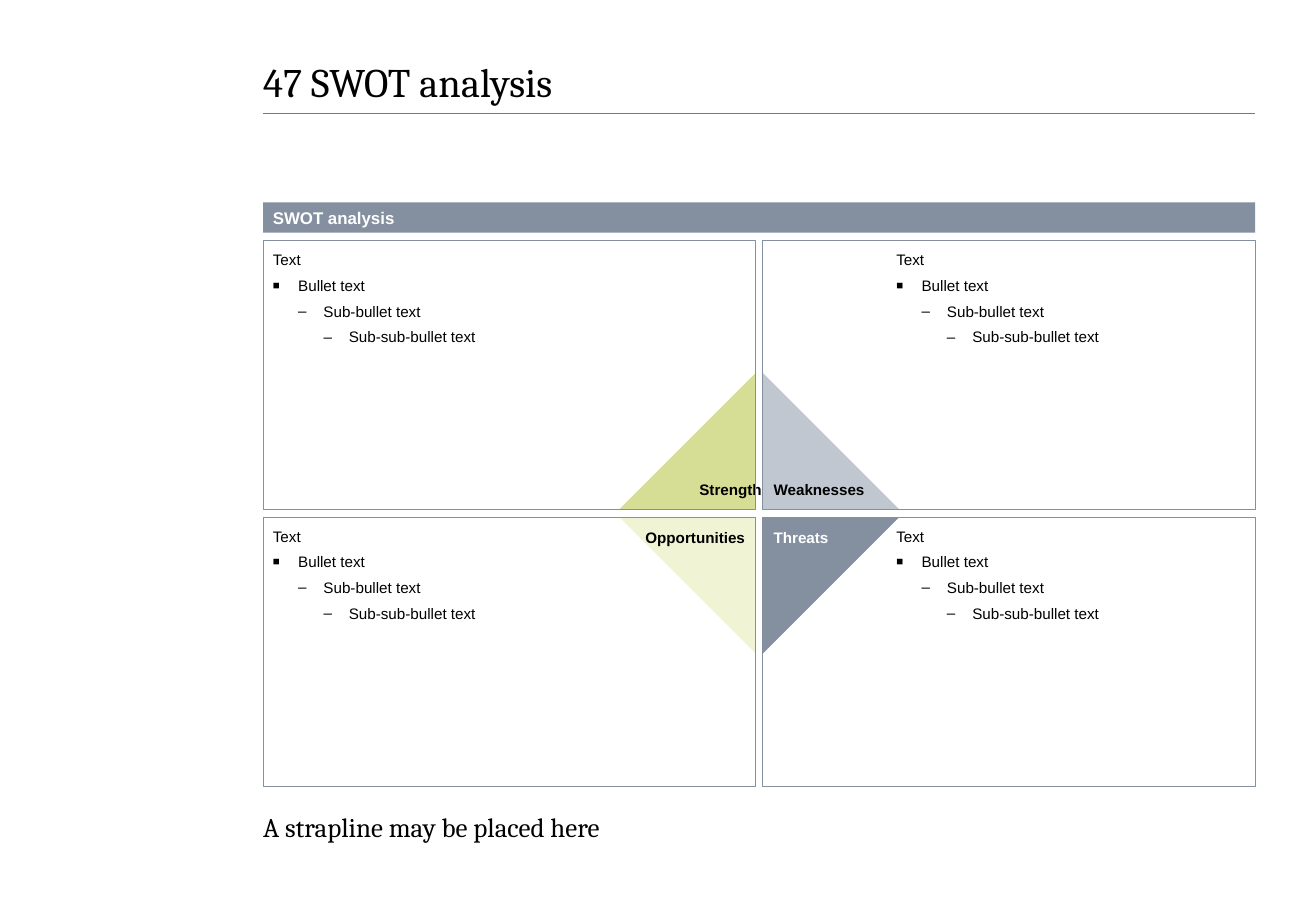
from lxml import etree
from pptx import Presentation
from pptx.dml.color import RGBColor
from pptx.enum import shapes, text
from pptx.oxml import ns
from pptx.util import Pt

BLACK = RGBColor(0x00, 0x00, 0x00)
WHITE = RGBColor(0xFF, 0xFF, 0xFF)
RULE_GREY = RGBColor(0x78, 0x78, 0x78)
SLATE = RGBColor(0x84, 0x8F, 0xA0)
LIGHT_SLATE = RGBColor(0xC1, 0xC7, 0xD0)
GREEN = RGBColor(0xD5, 0xDE, 0x94)
PALE_GREEN = RGBColor(0xF0, 0xF4, 0xD4)

LEFT, WIDTH = 156, 588
GAP_X, GAP_Y = 4, 4.5
INSET = 5.75
TRIANGLE = 81
BULLET_STEP = 15
LABEL_WIDTH, LABEL_HEIGHT = 90, 11
LABEL_RISE = 14.25  # from the centre of the grid to the middle of a label

# column, row, label, fill, label colour, rotation, label distance from centre
QUADRANTS = [
    (1, 1, "Threats", SLATE, WHITE, 90, 8.5),
    (0, 1, "Opportunities", PALE_GREEN, BLACK, 180, 8.5),
    (0, 0, "Strengths", GREEN, BLACK, 270, -6.5),
    (1, 0, "Weaknesses", LIGHT_SLATE, BLACK, 0, 8.5),
]
# text, bullet, bullet size in percent
OUTLINE = [
    ("Text", None, None),
    ("Bullet text", "■", 75),
    ("Sub-bullet text", "–", 100),
    ("Sub-sub-bullet text", "–", 100),
]


def set_frame(shape, insets=(0, 0, 0, 0), anchor=text.MSO_ANCHOR.TOP):
    frame = shape.text_frame
    formats = {"word_wrap": True, "vertical_anchor": anchor}
    sides = ("margin_left", "margin_top", "margin_right", "margin_bottom")
    formats.update(zip(sides, map(Pt, insets)))
    for name, value in formats.items():
        setattr(frame, name, value)
    return frame


def add_span(para, words, size, color=BLACK, font="Arial", bold=False):
    span = para.add_run()
    span.text = words
    for name, value in {"name": font, "size": Pt(size), "bold": bold}.items():
        setattr(span.font, name, value)
    span.font.color.rgb = color


def add_shape(page, kind, box, fill=None, line=None):
    shape = page.shapes.add_shape(kind, *map(Pt, box))
    shape.shadow.inherit = False
    if fill is None:
        shape.fill.background()
    else:
        shape.fill.solid()
        shape.fill.fore_color.rgb = fill
    if line is None:
        shape.line.fill.background()
    else:
        shape.line.color.rgb = line
        shape.line.width = Pt(0.5)
    return shape


def add_text(page, box, words, size, align=text.PP_ALIGN.LEFT,
             insets=(0, 0, 0, 0), anchor=text.MSO_ANCHOR.TOP, **style):
    frame = set_frame(page.shapes.add_textbox(*map(Pt, box)), insets, anchor)
    para = frame.paragraphs[0]
    para.alignment = align
    add_span(para, words, size, **style)


def add_title(page, box, words):
    """Place the title and the rule beneath it."""
    left, top, width, height = box
    add_text(page, box, words, 24, insets=(0, 0, 0, 8),
             anchor=text.MSO_ANCHOR.MIDDLE, font="Cambria")
    rule_y = top + height + 1.5
    rule = page.shapes.add_connector(
        shapes.MSO_CONNECTOR.STRAIGHT,
        *map(Pt, (left, rule_y, left + width, rule_y)))
    rule.line.color.rgb = RULE_GREY
    rule.line.width = Pt(0.5)
    etree.SubElement(rule._element.spPr, ns.qn("a:effectLst"))


def add_header(page, box, words):
    bar = add_shape(page, shapes.MSO_SHAPE.RECTANGLE, box, fill=SLATE)
    frame = set_frame(bar, (INSET, 0, INSET, 0), text.MSO_ANCHOR.MIDDLE)
    para = frame.paragraphs[0]
    para.alignment = text.PP_ALIGN.LEFT
    add_span(para, words, 10, WHITE, bold=True)


def add_bullet(para, level, symbol, percent):
    properties = para._p.get_or_add_pPr()
    properties.set("marL", str(Pt(level * BULLET_STEP)))
    properties.set("indent", str(Pt(-BULLET_STEP)))
    for tag, name, value in (("a:buSzPct", "val", str(percent * 1000)),
                             ("a:buFont", "typeface", "Arial"),
                             ("a:buChar", "char", symbol)):
        etree.SubElement(properties, ns.qn(tag)).set(name, value)


def add_panel(page, box, text_inset):
    panel = add_shape(page, shapes.MSO_SHAPE.RECTANGLE, box, line=SLATE)
    frame = set_frame(panel, (text_inset, INSET, INSET, INSET))
    for level, (words, symbol, percent) in enumerate(OUTLINE):
        para = frame.add_paragraph() if level else frame.paragraphs[0]
        if symbol:
            add_bullet(para, level, symbol, percent)
            para.space_before = Pt(4.5)
        para.alignment = text.PP_ALIGN.LEFT
        add_span(para, words, 9)


def add_corner(page, center, column, row, label, fill, color, rotation, offset):
    """Place a triangle and its label against the centre of the grid."""
    center_x, center_y = center
    left = center_x + (GAP_X / 2 if column else -GAP_X / 2 - TRIANGLE)
    top = center_y + (GAP_Y / 2 if row else -GAP_Y / 2 - TRIANGLE)
    triangle = add_shape(page, shapes.MSO_SHAPE.RIGHT_TRIANGLE,
                         (left, top, TRIANGLE, TRIANGLE), fill=fill)
    triangle.rotation = rotation
    label_left = center_x + (offset if column else -offset - LABEL_WIDTH)
    label_middle = center_y + (LABEL_RISE if row else -LABEL_RISE)
    align = text.PP_ALIGN.LEFT if column else text.PP_ALIGN.RIGHT
    add_text(page, (label_left, label_middle - LABEL_HEIGHT / 2,
                    LABEL_WIDTH, LABEL_HEIGHT),
             label, 9, align, color=color, bold=True)


def add_swot_grid(page, box):
    left, top, width, height = box
    center = (left + width / 2, top + height / 2)
    panel_width, panel_height = (width - GAP_X) / 2, (height - GAP_Y) / 2
    for quadrant in QUADRANTS:
        add_corner(page, center, *quadrant)
    for column, text_inset in enumerate((INSET, 79.25)):
        for row in range(2):
            add_panel(page, (left + column * (panel_width + GAP_X),
                             top + row * (panel_height + GAP_Y),
                             panel_width, panel_height), text_inset)


def main():
    deck = Presentation()
    deck.slide_width, deck.slide_height = Pt(780), Pt(540)
    page = deck.slides.add_slide(deck.slide_layouts[6])
    add_title(page, (LEFT, 38, WIDTH, 28), "47\u00a0SWOT analysis".replace("\u00a0", " "))
    add_header(page, (LEFT, 120, WIDTH, 18), "SWOT analysis")
    add_text(page, (LEFT, 480.25, WIDTH, 19.5),
             "A strapline may be placed here", 16, font="Cambria")
    add_swot_grid(page, (LEFT, 142.5, WIDTH, 323.5))
    deck.save("out.pptx")


if __name__ == "__main__":
    main()
